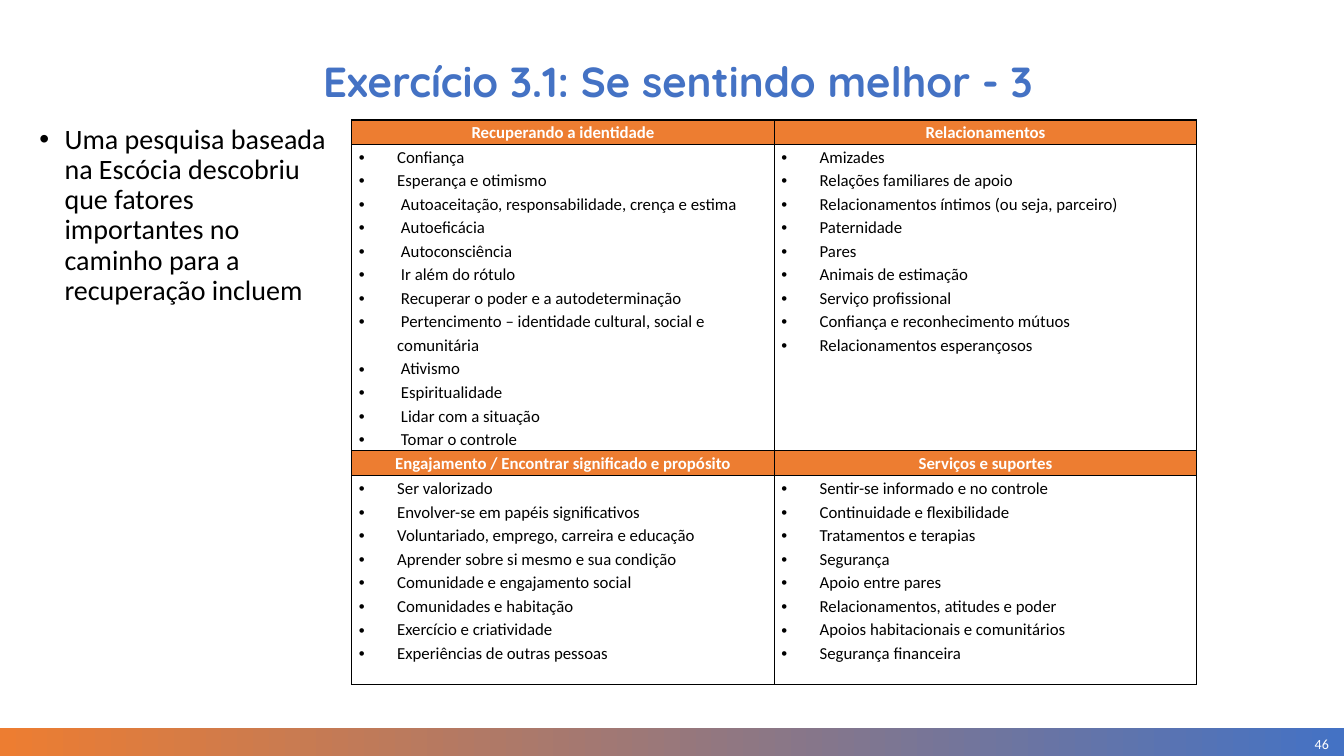
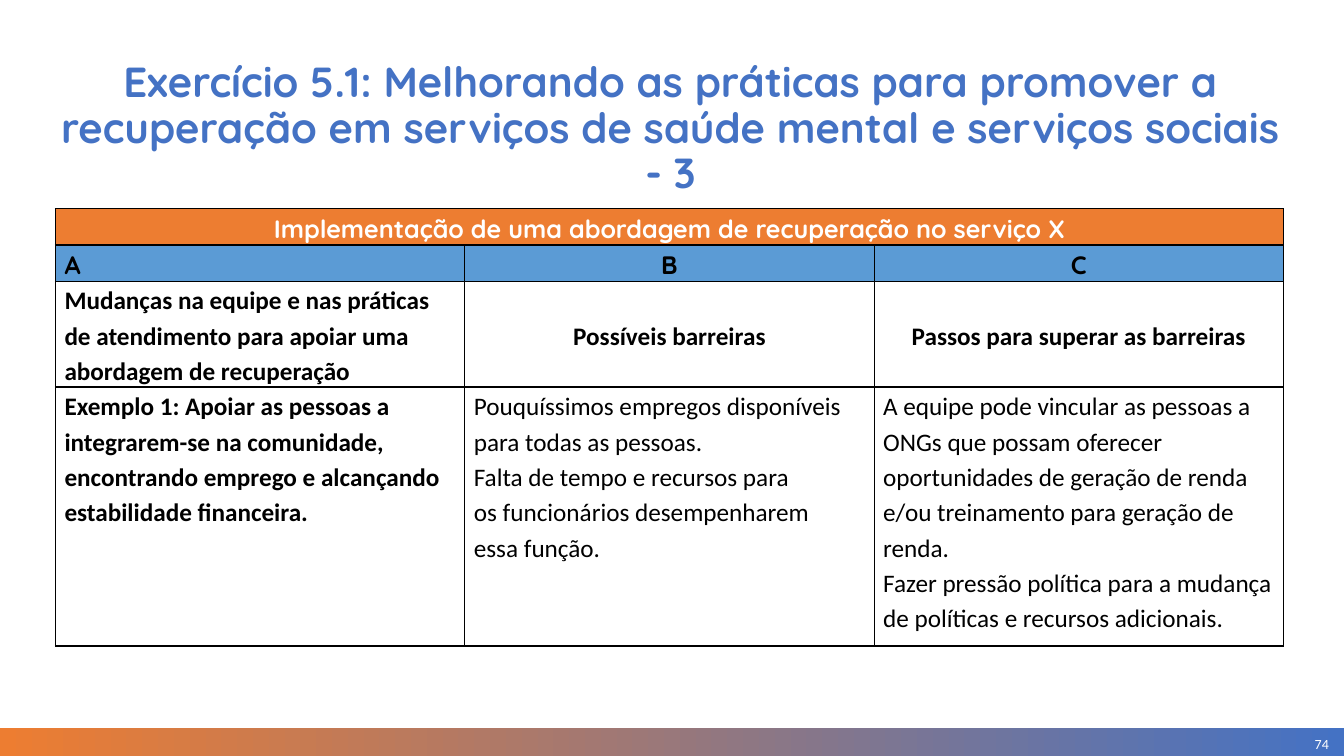
from lxml.etree import SubElement
from pptx import Presentation
from pptx.dml.color import RGBColor
from pptx.enum.shapes import MSO_SHAPE
from pptx.enum.text import MSO_ANCHOR, MSO_AUTO_SIZE, PP_ALIGN
from pptx.oxml.ns import qn
from pptx.util import Inches, Pt

ORANGE = RGBColor(0xED, 0x7D, 0x31)
BLUE = RGBColor(0x44, 0x72, 0xC4)
LIGHT_BLUE = RGBColor(0x5B, 0x9B, 0xD5)
BLACK = RGBColor(0, 0, 0)
WHITE = RGBColor(0xFF, 0xFF, 0xFF)

BODY_FONT = "Calibri"
HEADING_FONT = "Quicksand"
TITLE_AND_CONTENT, TITLE_ONLY = 1, 5
SLIDE_WIDTH, SLIDE_HEIGHT = 13.33, 7.5
BAND_HEIGHT = 0.28

RECOVERY_FACTORS = [
    ("Recuperando a identidade", [
        "Confiança",
        "Esperança e otimismo",
        " Autoaceitação, responsabilidade, crença e estima",
        " Autoeficácia",
        " Autoconsciência",
        " Ir além do rótulo",
        " Recuperar o poder e a autodeterminação",
        " Pertencimento – identidade cultural, social e comunitária",
        " Ativismo",
        " Espiritualidade",
        " Lidar com a situação",
        " Tomar o controle",
    ]),
    ("Relacionamentos", [
        "Amizades",
        "Relações familiares de apoio",
        "Relacionamentos íntimos (ou seja, parceiro)",
        "Paternidade",
        "Pares",
        "Animais de estimação",
        "Serviço profissional",
        "Confiança e reconhecimento mútuos",
        "Relacionamentos esperançosos",
    ]),
    ("Engajamento / Encontrar significado e propósito", [
        "Ser valorizado",
        "Envolver-se em papéis significativos",
        "Voluntariado, emprego, carreira e educação",
        "Aprender sobre si mesmo e sua condição",
        "Comunidade e engajamento social",
        "Comunidades e habitação",
        "Exercício e criatividade",
        "Experiências de outras pessoas",
    ]),
    ("Serviços e suportes", [
        "Sentir-se informado e no controle",
        "Continuidade e flexibilidade",
        "Tratamentos e terapias",
        "Segurança",
        "Apoio entre pares",
        "Relacionamentos, atitudes e poder",
        "Apoios habitacionais e comunitários",
        "Segurança financeira",
    ]),
]

PLAN_HEADING = "Implementação de uma abordagem de recuperação no serviço X"
PLAN_COLUMNS = [
    ("A",
     "Mudanças na equipe e nas práticas de atendimento para apoiar uma "
     "abordagem de recuperação",
     ["Exemplo 1: Apoiar as pessoas a integrarem-se na comunidade, "
      "encontrando emprego e alcançando estabilidade financeira."]),
    ("B", "Possíveis barreiras",
     ["Pouquíssimos empregos disponíveis",
      "para todas as pessoas.",
      "Falta de tempo e recursos para",
      "os funcionários desempenharem",
      "essa função."]),
    ("C", "Passos para superar as barreiras",
     ["A equipe pode vincular as pessoas a ONGs que possam oferecer "
      "oportunidades de geração de renda e/ou treinamento para geração "
      "de renda.",
      "Fazer pressão política para a mudança de políticas e recursos "
      "adicionais."]),
]


def add_bullet(para, indent):
    properties = para._p.get_or_add_pPr()
    properties.set("marL", str(Inches(indent)))
    properties.set("indent", str(-Inches(indent)))
    SubElement(properties, qn("a:buFont"), typeface="Arial")
    SubElement(properties, qn("a:buChar"), char="•")


def write(frame, text, *, size, font=BODY_FONT, color=BLACK, bold=False,
          align=PP_ALIGN.LEFT, spacing=1.0, indent=None):
    """Fill a text frame with one paragraph, or with one for each list item."""
    lines = [text] if isinstance(text, str) else text
    for index, line in enumerate(lines):
        para = frame.add_paragraph() if index else frame.paragraphs[0]
        if indent:
            add_bullet(para, indent)
        para.alignment = align
        para.line_spacing = spacing
        para.space_before = Pt(0)
        span = para.add_run()
        span.text = line
        span.font.name = font
        span.font.size = Pt(size)
        span.font.bold = bold
        span.font.color.rgb = color


def place(shape, left, top, width, height):
    shape.left, shape.top = Inches(left), Inches(top)
    shape.width, shape.height = Inches(width), Inches(height)


def fill_placeholder(placeholder, text, area, **text_format):
    place(placeholder, *area)
    frame = placeholder.text_frame
    frame.word_wrap = True
    frame.auto_size = MSO_AUTO_SIZE.NONE
    frame.vertical_anchor = MSO_ANCHOR.TOP
    write(frame, text, spacing=0.9, **text_format)


def add_master_band(deck, page):
    """Draw the gradient band, then move it to the master of all slides."""
    band = page.shapes.add_shape(
        MSO_SHAPE.RECTANGLE, 0, Inches(SLIDE_HEIGHT - BAND_HEIGHT),
        Inches(SLIDE_WIDTH), Inches(BAND_HEIGHT))
    band.shadow.inherit = False
    band.line.fill.background()
    band.fill.gradient()
    band.fill.gradient_angle = 0
    for stop, color, position in zip(band.fill.gradient_stops,
                                     (ORANGE, BLUE), (0, 1)):
        stop.color.rgb = color
        stop.position = position
    deck.slide_master.shapes.element.insert(2, band.element)


def add_page_number(page, number):
    box = page.shapes.add_textbox(Inches(11.38), Inches(7.26),
                                  Inches(1.8), Inches(0.24))
    frame = box.text_frame
    frame.word_wrap = True
    frame.vertical_anchor = MSO_ANCHOR.MIDDLE
    frame.margin_left = frame.margin_right = 0
    frame.margin_top = frame.margin_bottom = 0
    write(frame, str(number), size=10, color=WHITE, align=PP_ALIGN.RIGHT)


def add_page(deck, layout, title, title_width, number):
    page = deck.slides.add_slide(deck.slide_layouts[layout])
    fill_placeholder(page.shapes.title, title, (0.43, 0.56, title_width, 0.47),
                     size=30, font=HEADING_FONT, color=BLUE, bold=True,
                     align=PP_ALIGN.CENTER)
    add_page_number(page, number)
    return page


def add_borders(cell):
    properties = cell._tc.get_or_add_tcPr()
    for index, side in enumerate(("lnL", "lnR", "lnT", "lnB")):
        line = properties.makeelement(qn(f"a:{side}"), {"w": str(Pt(1))})
        paint = SubElement(line, qn("a:solidFill"))
        SubElement(paint, qn("a:srgbClr"), val=str(BLACK))
        properties.insert(index, line)


def add_grid(page, left, top, column_width, columns, row_heights, margin):
    """Add an empty white table with black borders."""
    frame = page.shapes.add_table(
        len(row_heights), columns, Inches(left), Inches(top),
        Inches(column_width * columns), Inches(sum(row_heights)))
    table = frame.table
    table.first_row = table.horz_banding = False
    for column in table.columns:
        column.width = Inches(column_width)
    for row, height in zip(table.rows, row_heights):
        row.height = Inches(height)
    for cell in table.iter_cells():
        cell.margin_left = cell.margin_right = Inches(margin)
        cell.margin_top = cell.margin_bottom = 0
        cell.fill.solid()
        cell.fill.fore_color.rgb = WHITE
        add_borders(cell)
    return table


def fill_cell(cell, text, fill=WHITE, anchor=MSO_ANCHOR.TOP, **text_format):
    cell.fill.fore_color.rgb = fill
    cell.vertical_anchor = anchor
    write(cell.text_frame, text, spacing=1.15, **text_format)


def add_factors_table(page):
    table = add_grid(page, 3.49, 1.19, 4.19, 2, (0.24, 3.04, 0.25, 2.07), 0.07)
    for index, (heading, factors) in enumerate(RECOVERY_FACTORS):
        block, column = divmod(index, 2)
        fill_cell(table.cell(2 * block, column), heading, fill=ORANGE, size=12,
                  color=WHITE, bold=True, align=PP_ALIGN.CENTER)
        fill_cell(table.cell(2 * block + 1, column), factors, size=12,
                  indent=0.38)


def add_plan_table(page):
    table = add_grid(page, 0.55, 2.07, 4.06, 3, (0.36, 0.36, 1.05, 2.57), 0.09)
    table.cell(0, 0).merge(table.cell(0, 2))
    heading = {"size": 18, "bold": True, "anchor": MSO_ANCHOR.MIDDLE}
    fill_cell(table.cell(0, 0), PLAN_HEADING, fill=ORANGE, font=HEADING_FONT,
              color=WHITE, align=PP_ALIGN.CENTER, **heading)
    for column, (letter, topic, example) in enumerate(PLAN_COLUMNS):
        align = PP_ALIGN.CENTER if column else PP_ALIGN.LEFT
        fill_cell(table.cell(1, column), letter, fill=LIGHT_BLUE,
                  font=HEADING_FONT, align=align, **heading)
        fill_cell(table.cell(2, column), topic, align=align, **heading)
        fill_cell(table.cell(3, column), example, size=18, bold=column == 0)


def main():
    deck = Presentation()
    deck.slide_width = Inches(SLIDE_WIDTH)
    deck.slide_height = Inches(SLIDE_HEIGHT)

    factors_page = add_page(deck, TITLE_AND_CONTENT,
                            "Exercício 3.1: Se sentindo melhor - 3", 12.59, 46)
    add_master_band(deck, factors_page)
    fill_placeholder(
        factors_page.placeholders[1],
        "Uma pesquisa baseada na Escócia descobriu que fatores importantes "
        "no caminho para a recuperação incluem",
        (0.29, 1.19, 3.06, 2.04), size=20, indent=0.25)
    add_factors_table(factors_page)

    plan_page = add_page(
        deck, TITLE_ONLY,
        "Exercício 5.1: Melhorando as práticas para promover a recuperação "
        "em serviços de saúde mental e serviços sociais - 3", 12.44, 74)
    add_plan_table(plan_page)

    deck.save("out.pptx")


if __name__ == "__main__":
    main()
